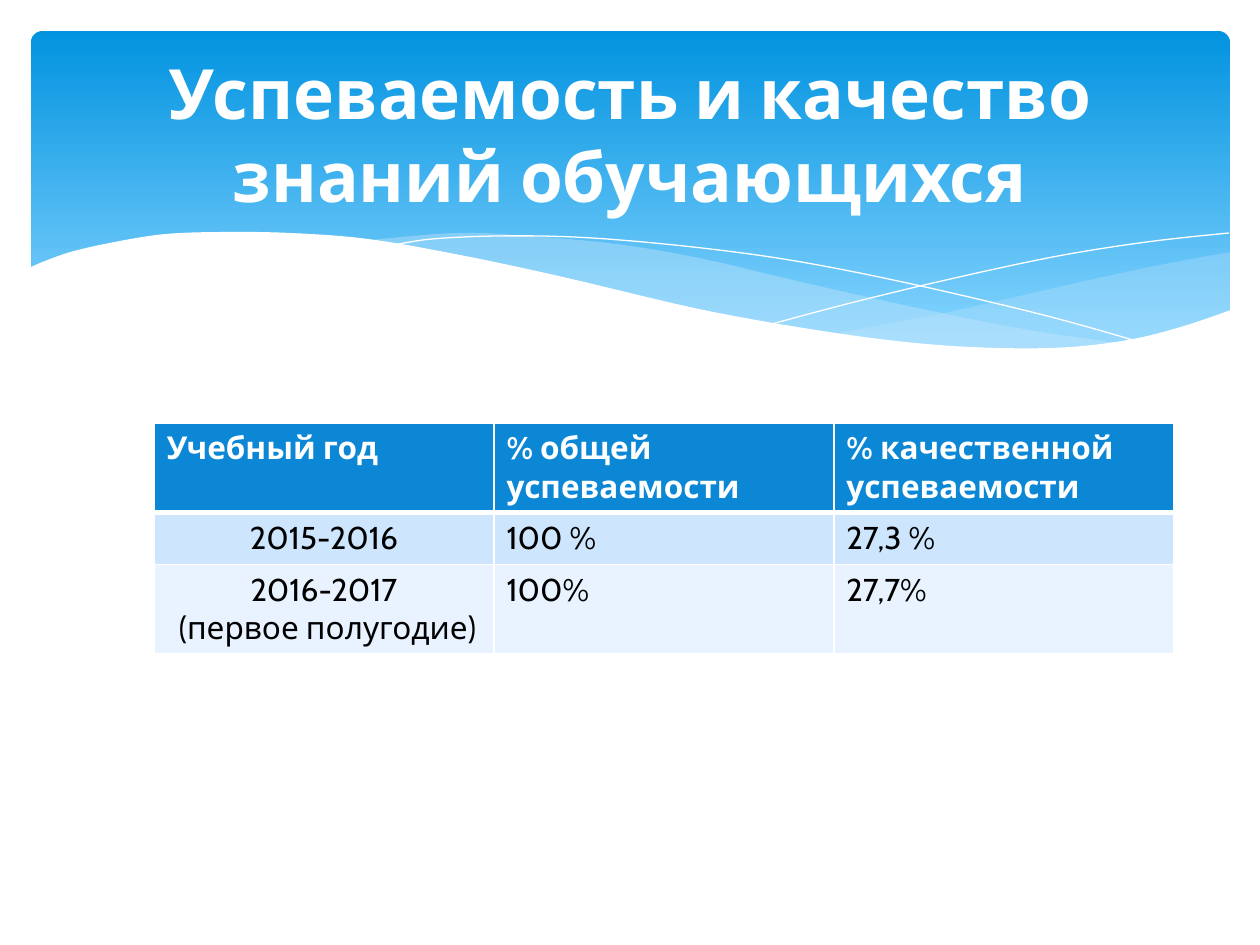
from lxml import etree
from pptx import Presentation
from pptx.dml.color import RGBColor
from pptx.enum.shapes import MSO_SHAPE as Shape
from pptx.enum.text import MSO_ANCHOR as Anchor, PP_ALIGN as Align
from pptx.oxml.ns import qn
from pptx.util import Pt

EMU_PER_PX = 914400 / 126
WHITE = "FFFFFF"


def px(length):
    return round(length * EMU_PER_PX)


def rgb(value):
    return RGBColor.from_string(value)


def smooth(points, steps=6):
    """Sample a Catmull-Rom curve that runs through the points."""
    padded = [points[0], *points, points[-1]]
    curve = [points[0]]
    for a, b, c, d in zip(padded, padded[1:], padded[2:], padded[3:]):
        for step in range(1, steps + 1):
            t = step / steps
            curve.append(tuple(
                (2 * q + (r - p) * t + (2 * p - 5 * q + 4 * r - s) * t ** 2
                 + (3 * q - p - 3 * r + s) * t ** 3) / 2
                for p, q, r, s in zip(a, b, c, d)))
    return curve


class SlideBuilder:
    text_format = {"name": "Cabin", "size": Pt(18), "bold": False}

    def __init__(self, slide):
        self.slide = slide
        self.shapes = slide.shapes

    def format_text(self, frame, color, align=Align.LEFT, **changes):
        for para in frame.paragraphs:
            para.alignment = align
            for span in para.runs:
                for key, value in {**self.text_format, **changes}.items():
                    setattr(span.font, key, value)
                span.font.color.rgb = rgb(color)

    def banner(self, box, top_color, bottom_color):
        banner = self.shapes.add_shape(Shape.ROUNDED_RECTANGLE, *map(px, box))
        banner.adjustments[0] = 0.034
        banner.shadow.inherit = False
        banner.line.fill.background()
        banner.fill.gradient()
        banner.fill.gradient_angle = 270
        stops = zip(banner.fill.gradient_stops, (0, 0.9), (top_color, bottom_color))
        for stop, position, color in stops:
            stop.position = position
            stop.color.rgb = rgb(color)

    def outline(self, edges, closed):
        points = [(px(x), px(y)) for edge in edges for x, y in smooth(edge)]
        builder = self.shapes.build_freeform(*points[0], scale=1.0)
        builder.add_line_segments(points[1:], close=closed)
        shape = builder.convert_to_shape()
        shape.shadow.inherit = False
        return shape

    def wave(self, edges, color, opacity=100):
        wave = self.outline(edges, closed=True)
        wave.line.fill.background()
        wave.fill.solid()
        wave.fill.fore_color.rgb = rgb(color)
        if opacity < 100:
            tint = wave.fill._xPr.find(".//" + qn("a:srgbClr"))
            etree.SubElement(tint, qn("a:alpha"), val=str(opacity * 1000))

    def hairline(self, points):
        line = self.outline([points], closed=False)
        line.fill.background()
        line.line.color.rgb = rgb(WHITE)
        line.line.width = Pt(0)

    def borders(self, cell, widths):
        properties = cell._tc.get_or_add_tcPr()
        for index, (side, width) in enumerate(widths.items()):
            border = etree.Element(qn("a:ln" + side), w=str(Pt(width)))
            fill = etree.SubElement(border, qn("a:solidFill"))
            etree.SubElement(fill, qn("a:srgbClr"), val=WHITE)
            properties.insert(index, border)

    def table(self, box, rows, heights, fills):
        table = self.shapes.add_table(len(rows), len(rows[0]), *map(px, box)).table
        for row, texts in enumerate(rows):
            table.rows[row].height = px(heights[row])
            header = row == 0
            for column, text in enumerate(texts):
                cell = table.cell(row, column)
                cell.text = text
                cell.fill.solid()
                cell.fill.fore_color.rgb = rgb(fills[row])
                centred = column == 0 and not header
                self.format_text(cell.text_frame, WHITE if header else "000000",
                                 Align.CENTER if centred else Align.LEFT, bold=header)
                self.borders(cell, {"L": 1, "R": 1, "T": 3 if row == 1 else 1,
                                    "B": 3 if header else 1})

    def title(self, box, text):
        title = self.shapes.title
        title.left, title.top, title.width, title.height = map(px, box)
        title.text_frame.text = text
        title.text_frame.word_wrap = True
        title.text_frame.vertical_anchor = Anchor.MIDDLE
        self.format_text(title.text_frame, WHITE, Align.CENTER,
                         size=Pt(39.6), bold=True)
        # Bring the title in front of the banner
        self.shapes._spTree.append(title._element)


def main():
    deck = Presentation()
    deck.slide_width, deck.slide_height = px(1260), px(945)
    page = SlideBuilder(deck.slides.add_slide(deck.slide_layouts[5]))

    # Blue banner
    page.banner((31, 31, 1199, 340), "0293E0", "83D3FE")

    # Translucent waves: upper edge, then lower edge
    page.wave([
        [(1230, 252), (1160, 265), (1085, 281), (949, 312), (833, 334)],
        [(833, 334), (906, 343), (984, 349), (1038, 349), (1099, 345),
         (1160, 334), (1196, 324), (1230, 311)],
    ], "C6E7FC", 29)
    page.wave([
        [(1125, 344), (1017, 328), (890, 302), (793, 280), (699, 258),
         (616, 244), (529, 236), (455, 233), (360, 241)],
        [(360, 241), (456, 256), (566, 280), (668, 302), (779, 325),
         (876, 340), (959, 349), (1031, 350), (1080, 349), (1125, 344)],
    ], "C6E7FC", 40)

    # Thin crossing curves
    page.hairline([(389, 246), (433, 239), (505, 236), (591, 238), (701, 248),
                   (801, 262), (916, 285), (1047, 316), (1143, 343)])
    page.hairline([(772, 324), (847, 304), (942, 281), (1053, 257),
                   (1147, 242), (1229, 233)])

    # White wave that cuts the banner's lower edge
    page.wave([
        [(1231, 310), (1184, 326), (1133, 339), (1071, 347), (999, 348),
         (915, 343), (816, 330), (699, 309), (563, 277), (460, 255),
         (368, 239), (290, 233), (223, 232), (166, 234), (120, 241),
         (74, 251), (45, 261), (29, 268)],
        [(29, 415), (1231, 415)],
    ], WHITE)

    # Results by school year
    page.table((154, 423, 1020, 228), [
        ("Учебный год", "% общей успеваемости", "% качественной успеваемости"),
        ("2015-2016", "100 %", "27,3 %"),
        ("2016-2017\n (первое полугодие)", "100%", "27,7%"),
    ], heights=(88, 52, 88), fills=("0B87D6", "CEE5FE", "E8F3FF"))

    # Title
    page.title((63, 47, 1134, 173), "Успеваемость и качество знаний обучающихся")

    deck.save("out.pptx")


if __name__ == "__main__":
    main()
